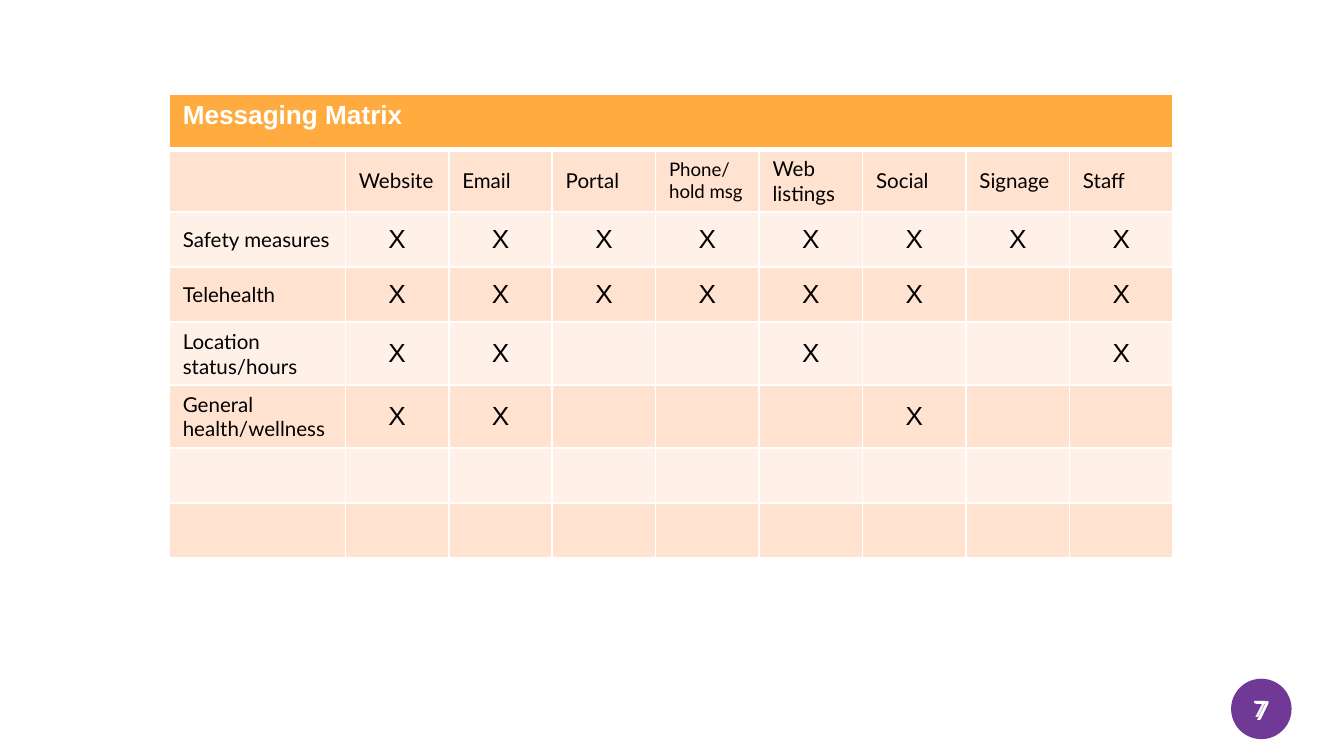
"""Build the messaging matrix slide."""
from dataclasses import dataclass

from lxml.etree import SubElement
from pptx import Presentation
from pptx.dml.color import RGBColor
from pptx.enum.shapes import MSO_SHAPE
from pptx.enum.text import MSO_ANCHOR, PP_ALIGN
from pptx.oxml.ns import qn
from pptx.slide import Slide
from pptx.table import _Cell
from pptx.text.text import TextFrame
from pptx.util import Inches, Pt


@dataclass(frozen=True)
class Theme:
    heading_font: str = "Arial"
    body_font: str = "Lato"
    white: str = "FFFFFF"
    black: str = "000000"
    orange: str = "FFAB40"
    peach: str = "FFE2CF"
    cream: str = "FFF1E8"
    purple: str = "703996"
    pale: str = "F2F2F2"
    large: int = 14
    badge: int = 12
    label: int = 11
    small: int = 10
    rule: int = 1
    heavy_rule: int = 3


@dataclass(frozen=True)
class Channel:
    name: str
    size: int


@dataclass(frozen=True)
class Topic:
    name: str = ""
    marks: str = ""


THEME = Theme()
TITLE = "Messaging Matrix"
PAGE_NUMBER = "7"
CHANNELS = [
    Channel("Website", THEME.label),
    Channel("Email", THEME.label),
    Channel("Portal", THEME.label),
    Channel("Phone/\nhold msg", THEME.small),
    Channel("Web listings", THEME.label),
    Channel("Social", THEME.label),
    Channel("Signage", THEME.label),
    Channel("Staff", THEME.label),
]
TOPICS = [
    Topic("Safety measures", "XXXXXXXX"),
    Topic("Telehealth", "XXXXXX-X"),
    Topic("Location status/hours", "XX--X--X"),
    Topic("General health/wellness", "XX---X--"),
    Topic(),
    Topic(),
]


def write_text(frame: TextFrame, text: str, *, size: int, font: str = THEME.body_font,
               color: str = THEME.black, bold: bool = False,
               align: PP_ALIGN = PP_ALIGN.LEFT) -> None:
    frame.text = text
    for para in frame.paragraphs:
        para.alignment = align
        for span in para.runs:
            span.font.size = Pt(size)
            span.font.name = font
            span.font.bold = bold
            span.font.color.rgb = RGBColor.from_string(color)


def style_cell(cell: _Cell, fill: str, *, top: int = THEME.rule,
               bottom: int = THEME.rule) -> None:
    properties = cell._tc.get_or_add_tcPr()
    widths = {"L": THEME.rule, "R": THEME.rule, "T": top, "B": bottom}
    for side, width in widths.items():
        line = SubElement(properties, qn(f"a:ln{side}"), w=str(Pt(width)))
        paint = SubElement(line, qn("a:solidFill"))
        SubElement(paint, qn("a:srgbClr"), val=THEME.white)
    cell.fill.solid()
    cell.fill.fore_color.rgb = RGBColor.from_string(fill)
    cell.vertical_anchor = MSO_ANCHOR.MIDDLE


def add_matrix(slide: Slide) -> None:
    row_count, column_count = len(TOPICS) + 2, len(CHANNELS) + 1
    table = slide.shapes.add_table(row_count, column_count, Inches(1.26), Inches(0.7),
                                   Inches(7.47), Inches(3.28)).table
    for index, column in enumerate(table.columns):
        column.width = Inches(0.77 if index else 1.31)
    for index, row in enumerate(table.rows):
        row.height = Inches(0.41)
        fill = THEME.peach if index % 2 else THEME.cream
        for cell in row.cells:
            style_cell(cell, fill if index else THEME.orange,
                       top=THEME.heavy_rule if index == 1 else THEME.rule,
                       bottom=THEME.rule if index else THEME.heavy_rule)

    heading = table.cell(0, 0)
    heading.merge(table.cell(0, column_count - 1))
    heading.vertical_anchor = MSO_ANCHOR.TOP
    write_text(heading.text_frame, TITLE, size=THEME.large, font=THEME.heading_font,
               color=THEME.white, bold=True)
    for column, channel in enumerate(CHANNELS, 1):
        write_text(table.cell(1, column).text_frame, channel.name, size=channel.size)
    for row, topic in enumerate(TOPICS, 2):
        if topic.name:
            write_text(table.cell(row, 0).text_frame, topic.name, size=THEME.label)
        for column, mark in enumerate(topic.marks, 1):
            if mark == "X":
                write_text(table.cell(row, column).text_frame, mark, size=THEME.large,
                           font=THEME.heading_font, align=PP_ALIGN.CENTER)


def set_frame(frame: TextFrame) -> None:
    frame.word_wrap = True
    frame.vertical_anchor = MSO_ANCHOR.MIDDLE
    frame.margin_left = frame.margin_right = Inches(0.1)
    frame.margin_top = frame.margin_bottom = Inches(0.1)


def add_page_badge(slide: Slide) -> None:
    badge = slide.shapes.add_shape(MSO_SHAPE.OVAL, Inches(9.16), Inches(5.05),
                                   Inches(0.45), Inches(0.45))
    badge.shadow.inherit = False
    badge.fill.solid()
    badge.fill.fore_color.rgb = RGBColor.from_string(THEME.purple)
    badge.line.fill.background()
    set_frame(badge.text_frame)
    write_text(badge.text_frame, PAGE_NUMBER, size=THEME.badge, color=THEME.pale, bold=True)

    box = slide.shapes.add_textbox(Inches(9.09), Inches(5.07), Inches(0.6), Inches(0.43))
    set_frame(box.text_frame)
    write_text(box.text_frame, PAGE_NUMBER, size=THEME.large, color=THEME.white,
               bold=True, align=PP_ALIGN.CENTER)


def main() -> None:
    deck = Presentation()
    deck.slide_width = Inches(10)
    deck.slide_height = deck.slide_width * 9 // 16
    page = deck.slides.add_slide(deck.slide_layouts[6])
    add_page_badge(page)
    add_matrix(page)
    deck.save("out.pptx")


if __name__ == "__main__":
    main()
